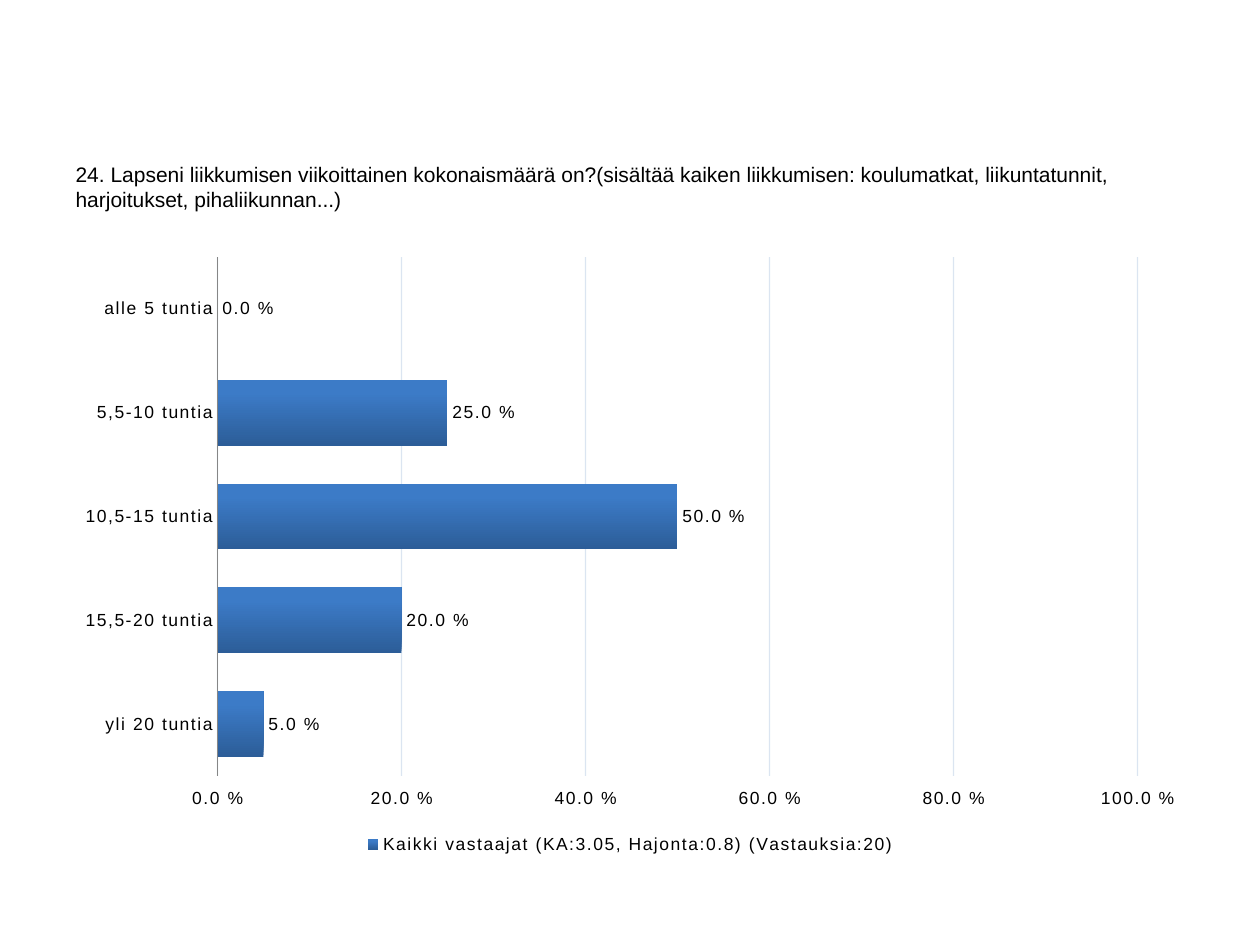
from pptx import Presentation
from pptx.chart.data import CategoryChartData
from pptx.dml.color import RGBColor
from pptx.enum.chart import (XL_CHART_TYPE, XL_LABEL_POSITION, XL_LEGEND_POSITION,
                             XL_TICK_LABEL_POSITION, XL_TICK_MARK)
from pptx.oxml import parse_xml
from pptx.oxml.ns import nsdecls, qn
from pptx.util import Pt

BAR_CHART = XL_CHART_TYPE.BAR_CLUSTERED
LEGEND_BOTTOM = XL_LEGEND_POSITION.BOTTOM
LABEL_OUTSIDE = XL_LABEL_POSITION.OUTSIDE_END
TICK_LABELS_HIGH = XL_TICK_LABEL_POSITION.HIGH
NO_TICKS = XL_TICK_MARK.NONE

BLACK = RGBColor(0x00, 0x00, 0x00)
AXIS_GRAY = RGBColor(0x86, 0x86, 0x86)
GRID_BLUE = RGBColor(0x4F, 0x81, 0xBD)
BAR_DARK = RGBColor(0x2C, 0x5D, 0x98)
BAR_LIGHT = RGBColor(0x3C, 0x7B, 0xC7)

PERCENT = "0.0\\ %"
LEFT, WIDTH = 36, 648
QUESTION = ("24. Lapseni liikkumisen viikoittainen kokonaismäärä on?"
            "(sisältää kaiken liikkumisen: koulumatkat, liikuntatunnit, "
            "harjoitukset, pihaliikunnan...)")
SERIES = "Kaikki vastaajat (KA:3.05, Hajonta:0.8) (Vastauksia:20)"
ANSWERS = {"alle 5 tuntia": 0, "5,5-10 tuntia": 0.25, "10,5-15 tuntia": 0.5,
           "15,5-20 tuntia": 0.2, "yli 20 tuntia": 0.05}


def apply(target, values):
    for name, value in values.items():
        setattr(target, name, value)


class SurveySlide:
    def __init__(self, deck):
        self.slide = deck.slides.add_slide(deck.slide_layouts[1])
        title = self.slide.shapes.title.element
        title.getparent().remove(title)

    def style(self, font, size):
        apply(font, {"name": "Arial", "size": Pt(size), "bold": False})
        font.color.rgb = BLACK

    def question(self, text, top, height):
        box = self.slide.placeholders[1]
        apply(box, {"left": Pt(LEFT), "top": Pt(top),
                    "width": Pt(WIDTH), "height": Pt(height)})
        para = box.text_frame.paragraphs[0]
        properties = para._p.get_or_add_pPr()
        for name in ("marL", "indent"):
            properties.set(name, "0")
        properties.append(parse_xml(f"<a:buNone {nsdecls('a')}/>"))
        span = para.add_run()
        span.text = text
        self.style(span.font, 12)

    def bar_chart(self, name, answers, top, height):
        data = CategoryChartData(number_format=PERCENT)
        data.categories = answers.keys()
        data.add_series(name, answers.values())
        chart = self.slide.shapes.add_chart(
            BAR_CHART, Pt(LEFT), Pt(top), Pt(WIDTH), Pt(height), data).chart
        apply(chart, {"has_title": False, "has_legend": True})
        apply(chart.legend, {"position": LEGEND_BOTTOM, "include_in_layout": False})
        self.style(chart.font, 10)
        self.style(chart.legend.font, 10)
        self.axes(chart)
        self.bars(chart.plots[0])
        self.plot_area(chart, x=88.3 / WIDTH, y=7.2 / height,
                       w=525.7 / WIDTH, h=296.6 / height)
        for properties in chart.element.iter(qn("a:defRPr")):
            properties.set("spc", "100")

    def axes(self, chart):
        category, value = chart.category_axis, chart.value_axis
        for axis in (category, value):
            apply(axis, {"major_tick_mark": NO_TICKS, "minor_tick_mark": NO_TICKS})
            self.style(axis.tick_labels.font, 10)
        apply(category, {"reverse_order": True, "has_major_gridlines": False})
        category.format.line.color.rgb = AXIS_GRAY
        category.format.line.width = Pt(0.75)
        apply(value, {"minimum_scale": 0, "maximum_scale": 1, "major_unit": 0.2,
                      "has_major_gridlines": True,
                      "tick_label_position": TICK_LABELS_HIGH})
        apply(value.tick_labels, {"number_format": PERCENT,
                                  "number_format_is_linked": False})
        value.format.line.fill.background()
        grid = value.major_gridlines.format.line
        grid.color.rgb = GRID_BLUE
        grid.width = Pt(0.75)
        gridlines = chart.element.find(".//" + qn("c:majorGridlines"))
        color = gridlines.find(".//" + qn("a:srgbClr"))
        color.append(parse_xml(f'<a:alpha {nsdecls("a")} val="20000"/>'))

    def bars(self, plot):
        apply(plot, {"gap_width": 58, "vary_by_categories": False,
                     "has_data_labels": True})
        apply(plot.data_labels, {"show_value": True, "number_format": PERCENT,
                                 "number_format_is_linked": False,
                                 "position": LABEL_OUTSIDE})
        self.style(plot.data_labels.font, 10)
        bar = plot.series[0].format
        bar.line.fill.background()
        bar.fill.gradient()
        bar.fill.gradient_angle = 90
        for stop, color, position in zip(bar.fill.gradient_stops,
                                         (BAR_DARK, BAR_LIGHT), (0, 0.8)):
            stop.color.rgb = color
            stop.position = position

    def plot_area(self, chart, **fractions):
        """Fix the inner plot area as fractions of the chart."""
        area = chart.element.find(".//" + qn("c:plotArea"))
        for layout in area.findall(qn("c:layout")):
            area.remove(layout)
        modes = "".join(f'<c:{side}Mode val="edge"/>' for side in "xy")
        sizes = "".join(f'<c:{key} val="{part}"/>' for key, part in fractions.items())
        area.insert(0, parse_xml(
            f'<c:layout {nsdecls("c")}><c:manualLayout><c:layoutTarget val="inner"/>'
            f"{modes}{sizes}</c:manualLayout></c:layout>"))


def main():
    deck = Presentation()
    apply(deck, {"slide_width": Pt(720), "slide_height": Pt(540)})
    page = SurveySlide(deck)
    page.question(QUESTION, top=88.5, height=42.5)
    page.bar_chart(SERIES, ANSWERS, top=139.7, height=351.3)
    deck.save("out.pptx")


if __name__ == "__main__":
    main()
